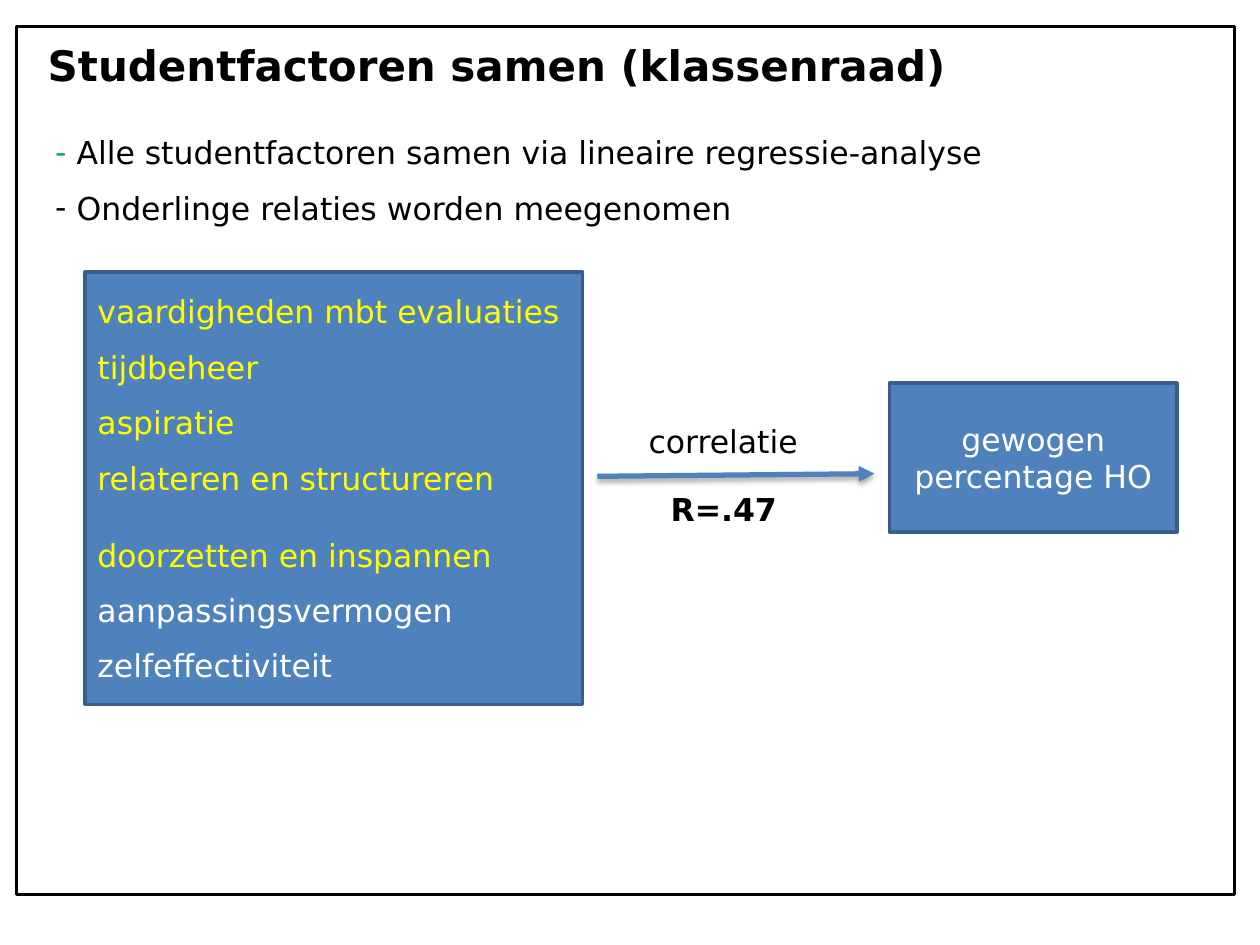
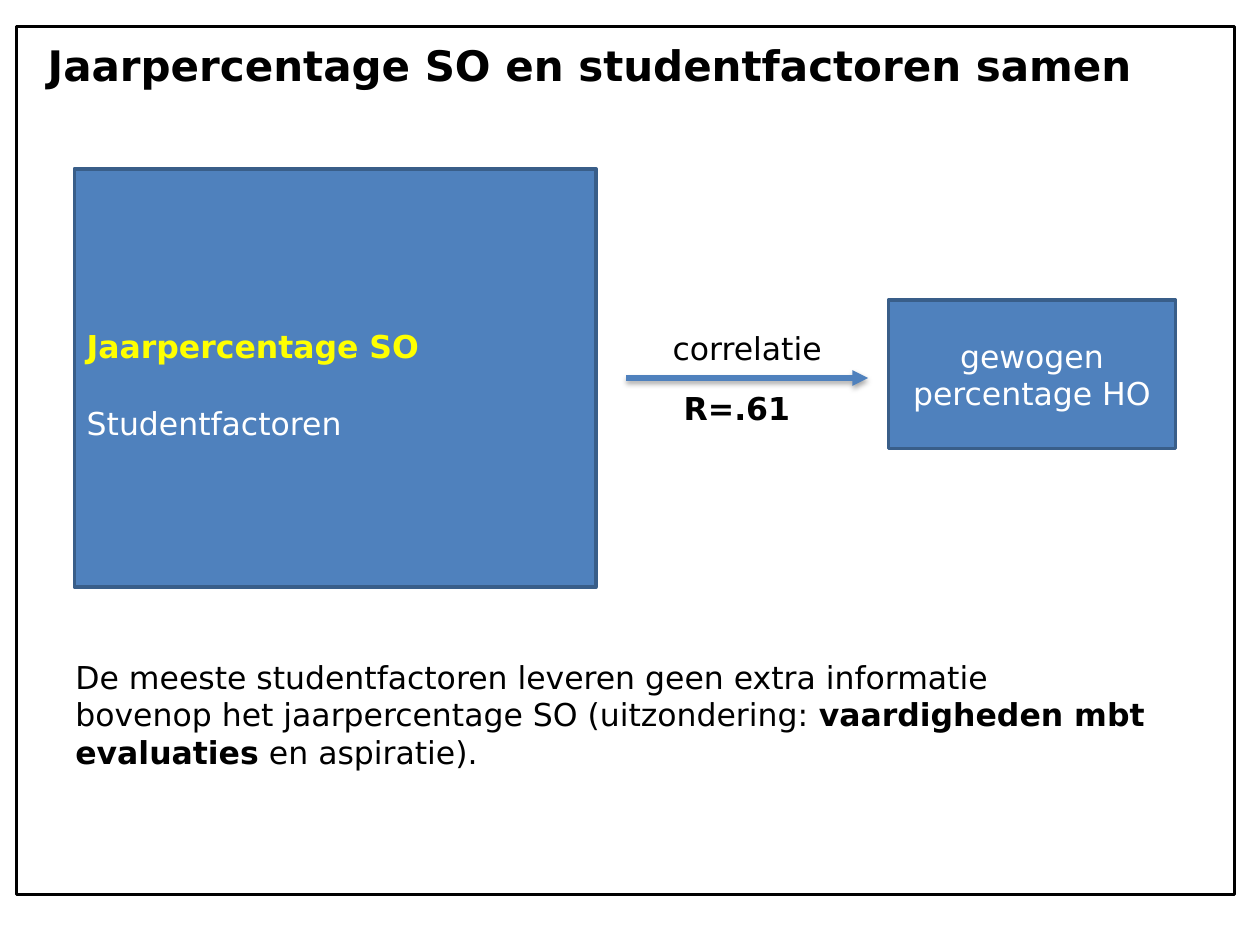
import pptx
import pptx.dml.color
import pptx.enum.shapes
import pptx.enum.text
import pptx.oxml
import pptx.oxml.ns
import pptx.util

Pt = pptx.util.Pt
ALIGN = pptx.enum.text.PP_ALIGN
ANCHOR = pptx.enum.text.MSO_ANCHOR

COLORS = {
    "text": "000000",
    "on_box": "FFFFFF",
    "highlight": "FFFF00",
    "bullet": "00B050",
    "box": "4F81BD",
    "box_edge": "395E89",
}
FONT = "DejaVu Sans"
BODY = {"size": Pt(18), "name": FONT, "bold": False}
TITLE = {"size": Pt(24), "name": FONT, "bold": True}
SMALL_GAP, LARGE_GAP = 10.1, 22.4
OUTCOME_SIZE = (164.2, 85)


def rgb(name):
    return pptx.dml.color.RGBColor.from_string(COLORS[name])


def add_xml(parent, content):
    parent.append(pptx.oxml.parse_xml(content.replace(
        ">", " " + pptx.oxml.ns.nsdecls("a") + ">", 1)))


def line(*spans, gap=0, indent=0, bullet=None, align=ALIGN.LEFT):
    """One paragraph; each span is (text, colour name, bold)."""
    return {"spans": spans, "gap": gap, "indent": indent,
            "bullet": bullet, "align": align}


def fill_text(frame, lines, style=BODY, anchor=ANCHOR.TOP, extra_top=0):
    settings = {
        "word_wrap": True, "vertical_anchor": anchor,
        "margin_left": Pt(7.2), "margin_right": Pt(7.2),
        "margin_top": Pt(3.6 + extra_top), "margin_bottom": Pt(3.6),
    }
    for key, value in settings.items():
        setattr(frame, key, value)
    for index, entry in enumerate(lines):
        para = frame.add_paragraph() if index else frame.paragraphs[0]
        properties = para._p.get_or_add_pPr()
        if entry["indent"]:
            properties.set("marL", str(Pt(entry["indent"])))
        if entry["bullet"]:
            properties.set("indent", str(-Pt(entry["indent"])))
            add_xml(properties, '<a:buClr><a:srgbClr val="%s"/></a:buClr>'
                    % COLORS[entry["bullet"]])
            add_xml(properties, '<a:buFont typeface="%s"></a:buFont>' % FONT)
            add_xml(properties, '<a:buChar char="-"></a:buChar>')
        para.alignment = entry["align"]
        para.space_before = Pt(entry["gap"])
        for text, color, bold in entry["spans"]:
            span = para.add_run()
            span.text = text
            for key, value in {**style, "bold": bold}.items():
                setattr(span.font, key, value)
            span.font.color.rgb = rgb(color)


def add_text(page, area, lines, **options):
    box = page.shapes.add_textbox(*map(Pt, area))
    fill_text(box.text_frame, lines, **options)


def add_rectangle(page, area, edge, width, fill=None):
    box = page.shapes.add_shape(
        pptx.enum.shapes.MSO_SHAPE.RECTANGLE, *map(Pt, area))
    box.shadow.inherit = False
    if fill:
        box.fill.solid()
        box.fill.fore_color.rgb = rgb(fill)
    else:
        box.fill.background()
    box.line.color.rgb = rgb(edge)
    box.line.width = Pt(width)
    return box


def add_factor_box(page, area, lines, extra_top=0):
    box = add_rectangle(page, area, "box_edge", 2, fill="box")
    fill_text(box.text_frame, lines, anchor=ANCHOR.MIDDLE, extra_top=extra_top)


def add_outcome_box(page, left, top):
    add_factor_box(page, (left, top, *OUTCOME_SIZE), [
        line(("gewogen percentage HO", "on_box", False), align=ALIGN.CENTER)])


def add_arrow(page, start, end):
    arrow = page.shapes.add_connector(
        pptx.enum.shapes.MSO_CONNECTOR.STRAIGHT, *map(Pt, start + end))
    arrow.line.color.rgb = rgb("box")
    arrow.line.width = Pt(3)
    add_xml(arrow.line._get_or_add_ln(), '<a:tailEnd type="triangle"></a:tailEnd>')
    add_xml(arrow._element.spPr, (
        '<a:effectLst><a:outerShdw blurRad="%d" dist="%d" dir="5400000" '
        'rotWithShape="0"><a:srgbClr val="000000"><a:alpha val="35000"/>'
        '</a:srgbClr></a:outerShdw></a:effectLst>') % (Pt(3.1), Pt(1.8)))


def add_correlation(page, area, value, gap, indent):
    add_text(page, area, [
        line(("correlatie", "text", False)),
        line((value, "text", True), gap=gap, indent=indent)])


def add_page(deck, title):
    page = deck.slides.add_slide(deck.slide_layouts[6])
    add_rectangle(page, (9.4, 15.1, 696.2, 496.1), "text", 1.75)
    add_text(page, (20.2, 15.1, 686.2, 43.2), [line((title, "text", True))],
             style=TITLE, anchor=ANCHOR.MIDDLE)
    return page


def build_student_factors(deck):
    page = add_page(deck, "Studentfactoren samen (klassenraad)")
    # Factors, with the telling ones highlighted
    factors = [
        ("vaardigheden mbt evaluaties", "highlight", 0),
        ("tijdbeheer", "highlight", SMALL_GAP),
        ("aspiratie", "highlight", SMALL_GAP),
        ("relateren en structureren", "highlight", SMALL_GAP),
        ("doorzetten en inspannen", "highlight", LARGE_GAP),
        ("aanpassingsvermogen", "on_box", SMALL_GAP),
        ("zelfeffectiviteit", "on_box", SMALL_GAP),
    ]
    add_factor_box(page, (48.6, 155.5, 284.4, 247), [
        line((text, color, False), gap=gap) for text, color, gap in factors])
    # Correlation with the outcome
    add_arrow(page, (341.3, 272.2), (499.7, 270.7))
    add_outcome_box(page, 508.3, 218.9)
    add_correlation(page, (363.6, 237.6, 124.6, 67.7), "R=.47", 17.3, 12.5)
    # Remarks
    remarks = [
        ("Alle studentfactoren samen via lineaire regressie-analyse", "bullet", 0),
        ("Onderlinge relaties worden meegenomen", "text", SMALL_GAP),
    ]
    add_text(page, (24.5, 72.7, 664.6, 60.5), [
        line((text, "text", False), gap=gap, indent=12.2, bullet=color)
        for text, color, gap in remarks])


def build_year_result(deck):
    page = add_page(deck, "Jaarpercentage SO en studentfactoren samen")
    # Predictors
    add_factor_box(page, (42.5, 96.5, 298.1, 239), [
        line(("Jaarpercentage SO", "highlight", True)),
        line(("Studentfactoren", "on_box", False), gap=LARGE_GAP),
    ], extra_top=7)
    # Correlation with the outcome
    add_arrow(page, (357.8, 216), (496.1, 216))
    add_outcome_box(page, 507.6, 171.4)
    add_correlation(page, (377.3, 184.3, 130.3, 63.4), "R=.61", 12.6, 6.3)
    # Conclusion
    add_text(page, (36, 372.2, 668.2, 72.7), [
        line(("De meeste studentfactoren leveren geen extra informatie",
              "text", False)),
        line(("bovenop het jaarpercentage SO (uitzondering: ", "text", False),
             ("vaardigheden mbt evaluaties", "text", True),
             (" en aspiratie).", "text", False)),
    ])


def main():
    deck = pptx.Presentation()
    deck.slide_width, deck.slide_height = Pt(720), Pt(540)
    build_student_factors(deck)
    build_year_result(deck)
    deck.save("out.pptx")


if __name__ == "__main__":
    main()
